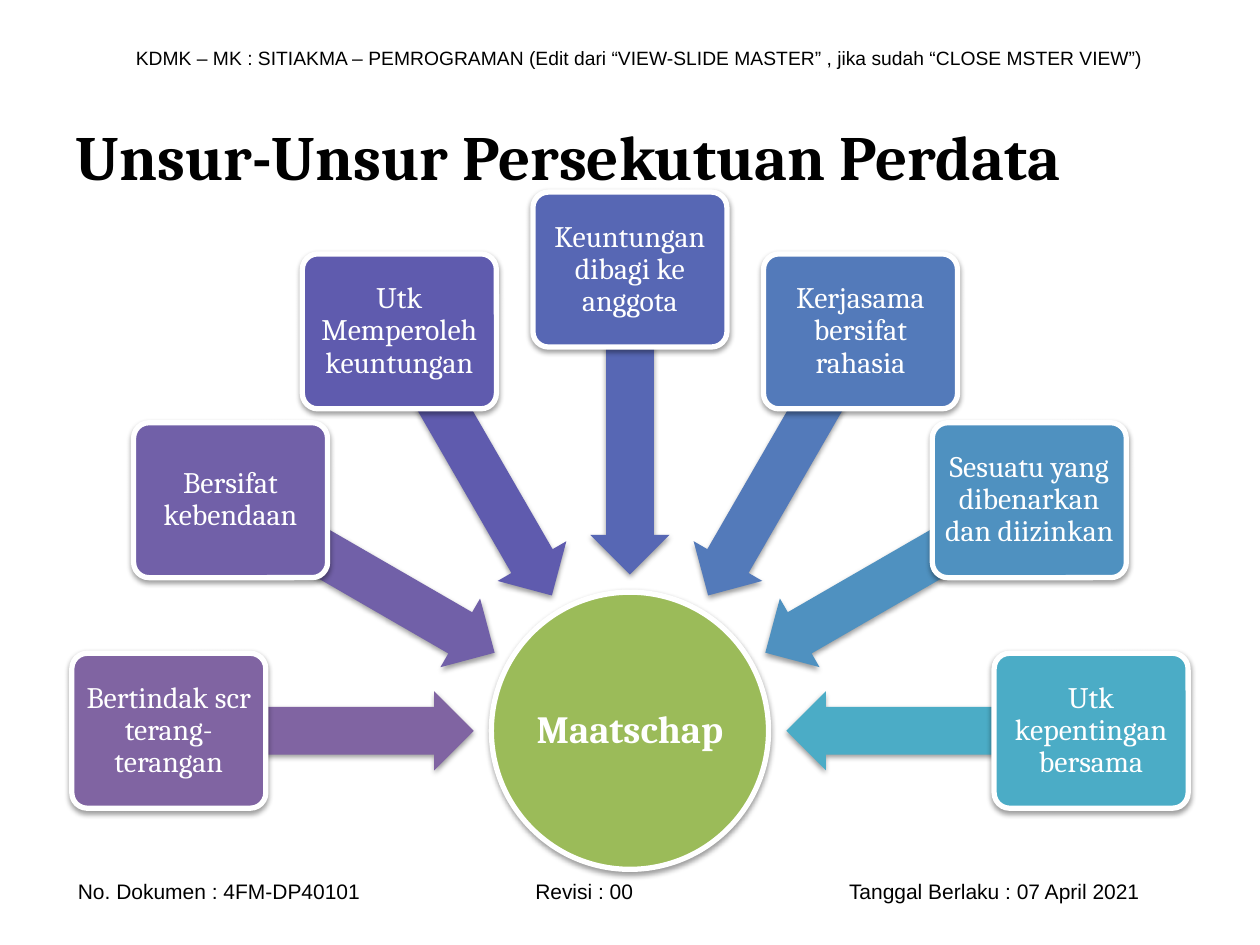
from math import cos, radians, sin

from lxml import etree
from pptx import Presentation
from pptx import util as u
from pptx.dml.color import RGBColor
from pptx.enum import shapes, text
from pptx.oxml import ns

BLACK = RGBColor(0, 0, 0)
WHITE = RGBColor(255, 255, 255)
GREEN = RGBColor(0x9B, 0xBB, 0x59)
PURPLE = RGBColor(0x80, 0x64, 0xA2)
PLUM = RGBColor(0x71, 0x60, 0xA8)
VIOLET = RGBColor(0x5F, 0x5B, 0xAE)
INDIGO = RGBColor(0x57, 0x67, 0xB4)
BLUE = RGBColor(0x53, 0x7A, 0xBA)
AZURE = RGBColor(0x4F, 0x91, 0xC0)
TEAL = RGBColor(0x4B, 0xAC, 0xC6)

PARTS = [
    ("Bertindak scr terang-terangan", PURPLE),
    ("Bersifat kebendaan", PLUM),
    ("Utk Memperoleh keuntungan", VIOLET),
    ("Keuntungan dibagi ke anggota", INDIGO),
    ("Kerjasama bersifat rahasia", BLUE),
    ("Sesuatu yang dibenarkan dan diizinkan", AZURE),
    ("Utk kepentingan bersama", TEAL),
]
HUB_X, HUB_Y = 5, 5.8
BOX_RAD, ARROW_RAD = 3.66, 2.45


def sub(node, tag, **attrs):
    return etree.SubElement(node, ns.qn(tag), attrs)


class Deck:
    serif = "Cambria"
    sans = "Arial"

    def __init__(self, slide):
        self.slide = slide

    def style(self, frame, font, size, color, bold=False):
        frame.word_wrap = True
        frame.vertical_anchor = text.MSO_ANCHOR.MIDDLE
        for run in frame.paragraphs[0].runs:
            run.font.name = font
            run.font.size = u.Pt(size)
            run.font.bold = bold
            run.font.color.rgb = color

    def label(self, words, left, top, width, height, font, size, bold=False, stops=()):
        box = self.slide.shapes.add_textbox(*map(u.Inches, (left, top, width, height)))
        para = box.text_frame.paragraphs[0]
        if stops:
            tabs = sub(para._p.get_or_add_pPr(), "a:tabLst")
            for stop in stops:
                sub(tabs, "a:tab", pos=str(u.Inches(stop)), algn="l")
        para.text = words
        self.style(box.text_frame, font, size, BLACK, bold)

    def shape(self, kind, mid_x, mid_y, width, height, color):
        left, top = mid_x - width / 2, mid_y - height / 2
        shape = self.slide.shapes.add_shape(kind, *map(u.Inches, (left, top, width, height)))
        shape.fill.solid()
        shape.fill.fore_color.rgb = color
        shape.line.fill.background()
        self.shade(shape)
        return shape

    def shade(self, shape):
        shape.shadow.inherit = False
        effects = shape._element.spPr.find(ns.qn("a:effectLst"))
        shadow = sub(effects, "a:outerShdw", blurRad="40000", dist="20000",
                     dir="5400000", rotWithShape="0")
        sub(sub(shadow, "a:srgbClr", val="000000"), "a:alpha", val="38000")

    def node(self, kind, words, mid_x, mid_y, width, height, color, size, inset, bold=False):
        shape = self.shape(kind, mid_x, mid_y, width, height, color)
        shape.line.color.rgb = WHITE
        shape.line.width = u.Pt(3)
        frame = shape.text_frame
        frame.margin_left = frame.margin_right = u.Inches(inset)
        frame.margin_top = frame.margin_bottom = u.Inches(inset)
        frame.text = words
        frame.paragraphs[0].alignment = text.PP_ALIGN.CENTER
        frame.paragraphs[0].line_spacing = 0.9
        self.style(frame, self.serif, size, WHITE, bold)
        return shape

    def arrow(self, mid_x, mid_y, turn, color):
        arrow = self.shape(shapes.MSO_SHAPE.LEFT_ARROW, mid_x, mid_y, 2.42, 0.63, color)
        arrow.adjustments[0] = 0.6
        arrow.adjustments[1] = 0.5
        arrow.rotation = turn

    def spoke(self, words, turn, color):
        dx, dy = cos(radians(turn)), sin(radians(turn))
        self.arrow(HUB_X + ARROW_RAD * dx, HUB_Y + ARROW_RAD * dy, turn % 360, color)
        box = self.node(shapes.MSO_SHAPE.ROUNDED_RECTANGLE, words, HUB_X + BOX_RAD * dx,
                        HUB_Y + BOX_RAD * dy, 1.54, 1.23, color, 17, 0.04)
        box.adjustments[0] = 0.1


def main():
    show = Presentation()
    show.slide_width = u.Inches(10)
    show.slide_height = u.Inches(7.5)
    deck = Deck(show.slides.add_slide(show.slide_layouts[6]))

    deck.label("KDMK – MK : SITIAKMA – PEMROGRAMAN (Edit dari “VIEW-SLIDE MASTER” , "
               "jika sudah “CLOSE MSTER VIEW”)", 0.98, 0.31, 8.35, 0.29, deck.sans, 11)
    deck.label("No. Dokumen : 4FM-DP40101\tRevisi : 00\tTanggal Berlaku : 07 April 2021",
               0.52, 6.92, 9.13, 0.3, deck.sans, 12, stops=(3.63, 6.12))
    deck.label("Unsur-Unsur Persekutuan Perdata", 0.5, 0.61, 9, 1.25, deck.serif, 36, True)

    deck.node(shapes.MSO_SHAPE.OVAL, "Maatschap", HUB_X, HUB_Y, 2.2, 2.2, GREEN, 22, 0.02, True)
    for i, (words, color) in enumerate(PARTS):
        deck.spoke(words, 180 + 30 * i, color)

    show.save("out.pptx")


if __name__ == "__main__":
    main()
